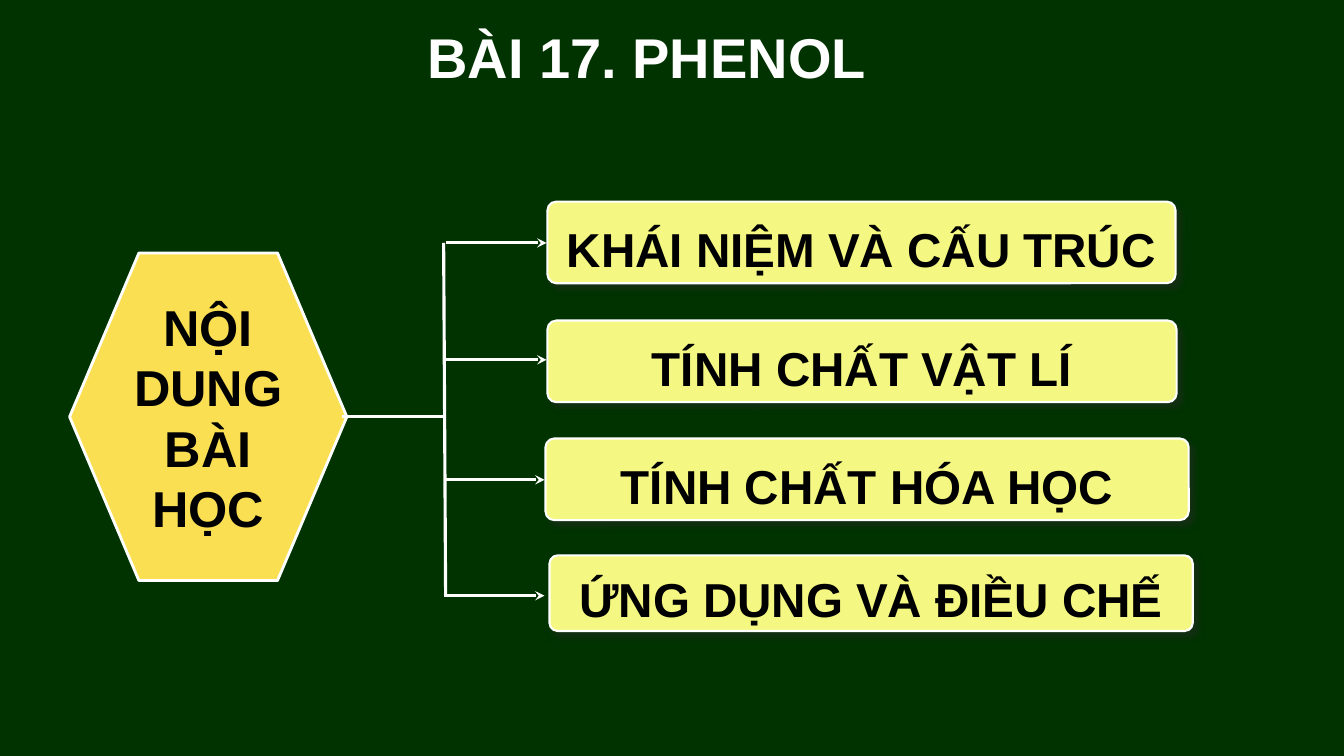
from lxml import etree
from pptx import Presentation
from pptx.dml.color import RGBColor
from pptx.enum.shapes import MSO_CONNECTOR, MSO_SHAPE
from pptx.enum.text import MSO_ANCHOR, MSO_AUTO_SIZE, PP_ALIGN
from pptx.oxml.ns import qn
from pptx.util import Inches, Pt

HEXAGON, ROUNDED = MSO_SHAPE.HEXAGON, MSO_SHAPE.ROUNDED_RECTANGLE
STRAIGHT = MSO_CONNECTOR.STRAIGHT
TOP, MIDDLE = MSO_ANCHOR.TOP, MSO_ANCHOR.MIDDLE
CENTER = PP_ALIGN.CENTER
NO_FIT = MSO_AUTO_SIZE.NONE

COLORS = {"board": "003300", "white": "FFFFFF", "black": "000000",
          "hub": "FBDF53", "topic": "F4F781", "shadow": "292929"}
FONT = "Arial"
CELL = 0.1  # grid cell in inches: 133.3 columns by 75 rows

# Topic boxes: text, left column, top row, width, height
TOPICS = [
    ("KHÁI NIỆM VÀ CẤU TRÚC", 54.3, 20, 62.3, 8.1),
    ("TÍNH CHẤT VẬT LÍ", 54.3, 31.8, 62.4, 8.1),
    ("TÍNH CHẤT HÓA HỌC", 54.1, 43.5, 63.8, 8.1),
    ("ỨNG DỤNG VÀ ĐIỀU CHẾ", 54.5, 55.1, 63.8, 7.5),
]
# Branch arrows: start column, row
BRANCHES = [(44.2, 24.1), (44.2, 35.7), (44, 47.6), (44, 59.1)]
BRANCH_COLS = 10
HUB_ROW = 41.3


def grid(*cells):
    return [Inches(n * CELL) for n in cells]


def rgb(name):
    return RGBColor.from_string(COLORS[name])


def write(s, text, size, color, anchor, spacing=1.0):
    tf = s.text_frame
    tf.word_wrap = True
    tf.auto_size = NO_FIT
    tf.vertical_anchor = anchor
    p = tf.paragraphs[0]
    p.alignment = CENTER
    p.line_spacing = spacing
    r = p.add_run()
    r.text = text
    r.font.name = FONT
    r.font.size = Pt(size)
    r.font.bold = True
    r.font.color.rgb = rgb(color)


def add_title(slide, text):
    s = slide.shapes.title
    s.left, s.top, s.width, s.height = grid(21.8, 1.7, 84.7, 7.7)
    write(s, text, 40, "white", TOP)


def add_box(slide, kind, cells, fill, line_width):
    s = slide.shapes.add_shape(kind, *grid(*cells))
    s.shadow.inherit = False
    s.fill.solid()
    s.fill.fore_color.rgb = rgb(fill)
    s.line.color.rgb = rgb("white")
    s.line.width = Pt(line_width)
    return s


def add_shadow(s):
    effects = s._element.spPr.find(qn("a:effectLst"))
    shadow = etree.SubElement(effects, qn("a:outerShdw"), blurRad=str(Pt(5)),
                              dist=str(Pt(4.2)), dir=str(45 * 60000),
                              algn="tl", rotWithShape="0")
    color = etree.SubElement(shadow, qn("a:srgbClr"), val=COLORS["shadow"])
    etree.SubElement(color, qn("a:alpha"), val="50000")


def add_topic(slide, text, *cells):
    s = add_box(slide, ROUNDED, cells, "topic", 1.5)
    s.adjustments[0] = 0.108
    add_shadow(s)
    write(s, text, 34, "black", MIDDLE, 1.2)


def add_line(slide, x1, y1, x2, y2, arrow=False):
    s = slide.shapes.add_connector(STRAIGHT, *grid(x1, y1, x2, y2))
    s.line.color.rgb = rgb("white")
    s.line.width = Pt(2.25)
    if arrow:
        etree.SubElement(s.line._get_or_add_ln(), qn("a:tailEnd"), type="stealth")
    etree.SubElement(s._element.spPr, qn("a:effectLst"))


def main():
    prs = Presentation()
    prs.slide_width, prs.slide_height = Inches(13.33), Inches(7.5)
    slide = prs.slides.add_slide(prs.slide_layouts[5])
    slide.background.fill.solid()
    slide.background.fill.fore_color.rgb = rgb("board")

    add_title(slide, "BÀI 17. PHENOL")

    # Hub and its topics
    hub = add_box(slide, HEXAGON, (6.9, 25.1, 27.5, 32.5), "hub", 2)
    write(hub, "NỘI DUNG BÀI HỌC", 36, "black", MIDDLE)
    for topic in TOPICS:
        add_topic(slide, *topic)

    # Stem, trunk and branch arrows
    add_line(slide, 33.9, HUB_ROW, 44, HUB_ROW)
    add_line(slide, 44, BRANCHES[0][1], 44.2, BRANCHES[-1][1])
    for col, row in BRANCHES:
        add_line(slide, col, row, col + BRANCH_COLS, row, arrow=True)

    prs.save("out.pptx")


if __name__ == "__main__":
    main()
